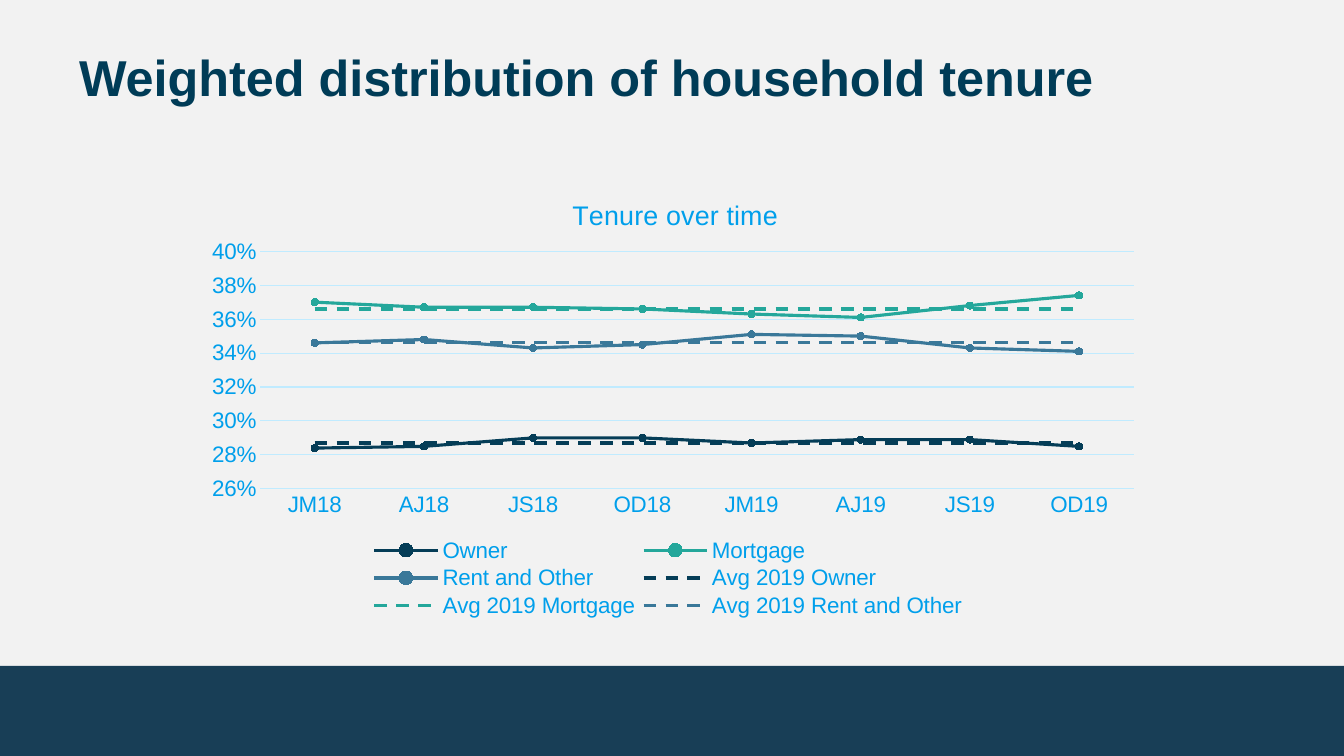
from lxml import etree
from pptx import Presentation
from pptx.chart.data import CategoryChartData
from pptx.dml.color import RGBColor
from pptx.enum.chart import XL_CHART_TYPE, XL_LEGEND_POSITION as LEGEND, XL_MARKER_STYLE as MARKER
from pptx.enum.chart import XL_TICK_MARK as TICK
from pptx.enum.dml import MSO_LINE
from pptx.enum.shapes import MSO_SHAPE
from pptx.enum.text import MSO_ANCHOR
from pptx.oxml.ns import qn
from pptx.util import Pt

PX = 914400 / 100.8
FONT = "Arial"
NAVY, SKY, PALE = "003C57", "009FEB", "C0EBFF"
CHART_BOX = (193, 169, 960, 457)
QUARTERS = ["JM18", "AJ18", "JS18", "OD18", "JM19", "AJ19", "JS19", "OD19"]
# name, colour, quarterly shares, 2019 average
TENURES = [
    ("Owner", "053D57", [0.284, 0.285, 0.29, 0.29, 0.287, 0.289, 0.289, 0.285], 0.287),
    ("Mortgage", "24A79B", [0.37, 0.367, 0.367, 0.366, 0.363, 0.361, 0.368, 0.374], 0.366),
    ("Rent and Other", "3A7899", [0.346, 0.348, 0.343, 0.345, 0.351, 0.35, 0.343, 0.341], 0.346),
]


def px(*lengths):
    return [round(n * PX) for n in lengths]


def rgb(color):
    return RGBColor.from_string(color)


def set_font(font, size, color, bold=False):
    font.name, font.size, font.bold = FONT, Pt(size), bold
    font.color.rgb = rgb(color)


def set_line(line, color, width):
    line.color.rgb = rgb(color)
    line.width = Pt(width)


def add_band(s, box, color):
    sp = s.shapes.add_shape(MSO_SHAPE.RECTANGLE, *px(*box))
    sp.shadow.inherit = False
    sp.fill.solid()
    sp.fill.fore_color.rgb = rgb(color)
    sp.line.fill.background()


def add_heading(s, box, text):
    tf = s.shapes.add_textbox(*px(*box)).text_frame
    tf.word_wrap = True
    tf.vertical_anchor = MSO_ANCHOR.MIDDLE
    tf.margin_left = tf.margin_right = tf.margin_top = tf.margin_bottom = 0
    tf.text = text
    p = tf.paragraphs[0]
    p.line_spacing = 0.95
    set_font(p.runs[0].font, 36, NAVY, True)


def place(part, left, top, width=None, height=None, inner=False):
    """Fix a chart part at slide pixels, stored as fractions of the chart."""
    x, y, w, h = CHART_BOX
    for old in part.findall(qn("c:layout")):
        part.remove(old)
    layout = etree.Element(qn("c:layout"))
    manual = etree.SubElement(layout, qn("c:manualLayout"))
    settings = [("layoutTarget", "inner")] if inner else []
    settings += [("xMode", "edge"), ("yMode", "edge"),
                 ("x", round((left - x) / w, 2)), ("y", round((top - y) / h, 2))]
    if width:
        settings += [("w", round(width / w, 2)), ("h", round(height / h, 2))]
    for tag, value in settings:
        etree.SubElement(manual, qn("c:" + tag)).set("val", str(value))
    before = part.find(qn("c:tx"))
    if before is None:
        before = part.find(qn("c:legendPos"))
    if before is None:
        part.insert(0, layout)
    else:
        before.addnext(layout)


def style_axes(chart):
    for axis in (chart.category_axis, chart.value_axis):
        axis.major_tick_mark = axis.minor_tick_mark = TICK.NONE
        set_font(axis.tick_labels.font, 16, SKY)
    set_line(chart.category_axis.format.line, PALE, 0.75)
    shares = chart.value_axis
    shares.minimum_scale, shares.maximum_scale, shares.major_unit = 0.26, 0.4, 0.02
    shares.tick_labels.number_format = "0%"
    shares.tick_labels.number_format_is_linked = False
    shares.format.line.fill.background()
    set_line(shares.major_gridlines.format.line, PALE, 0.75)


def style_series(series, color, dashed):
    series.smooth = False
    set_line(series.format.line, color, 2.25)
    if dashed:
        series.format.line.dash_style = MSO_LINE.DASH
        series.marker.style = MARKER.NONE
        return
    series.marker.style, series.marker.size = MARKER.CIRCLE, 5
    series.marker.format.fill.solid()
    series.marker.format.fill.fore_color.rgb = rgb(color)
    set_line(series.marker.format.line, color, 0.75)


def add_tenure_chart(s):
    data = CategoryChartData(number_format="0%")
    data.categories = QUARTERS
    for name, _, shares, _ in TENURES:
        data.add_series(name, shares)
    for name, _, _, average in TENURES:
        data.add_series("Avg 2019 " + name, [average] * len(QUARTERS))
    chart = s.shapes.add_chart(XL_CHART_TYPE.LINE_MARKERS, *px(*CHART_BOX), data).chart
    set_font(chart.font, 16, NAVY)
    chart.plots[0].vary_by_categories = False
    for i, series in enumerate(chart.plots[0].series):
        style_series(series, TENURES[i % len(TENURES)][1], i >= len(TENURES))
    style_axes(chart)

    title = chart.chart_title
    title.text_frame.text = "Tenure over time"
    set_font(title.text_frame.paragraphs[0].runs[0].font, 19.2, SKY)
    chart.has_legend = True
    chart.legend.position = LEGEND.BOTTOM
    chart.legend.include_in_layout = False
    set_font(chart.legend.font, 16, SKY)

    root = chart.element.find(qn("c:chart"))
    place(root.find(qn("c:title")), 569, 191)
    place(root.find(qn("c:plotArea")), 260, 252, 872, 238, inner=True)
    place(root.find(qn("c:legend")), 370, 535, 604, 89)


def main():
    prs = Presentation()
    prs.slide_width, prs.slide_height = px(1344, 756)
    s = prs.slides.add_slide(prs.slide_layouts[6])
    s.background.fill.solid()
    s.background.fill.fore_color.rgb = rgb("F2F2F2")
    add_band(s, (0, 666, 1344, 90), "183E56")
    add_heading(s, (79, 50, 1159, 58), "Weighted distribution of household tenure")
    add_tenure_chart(s)
    prs.save("out.pptx")


if __name__ == "__main__":
    main()
